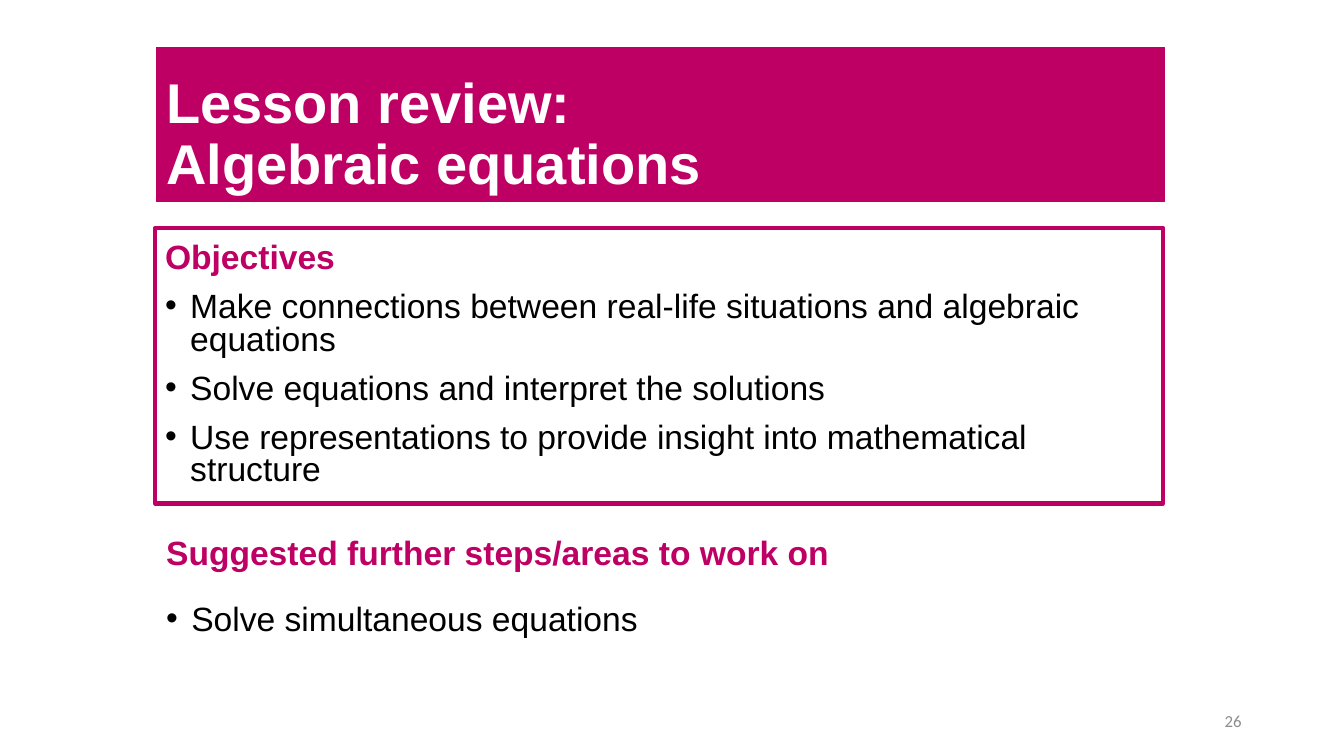
from lxml import etree
from pptx import Presentation
from pptx.dml.color import RGBColor
from pptx.enum import shapes, text
from pptx.oxml import ns
from pptx.util import Pt

MAGENTA = "BE0064"
WHITE = "FFFFFF"
BLACK = "000000"
GREY = "8C8C8C"


def colour(code):
    return RGBColor.from_string(code)


def prepare_frame(shape, anchor):
    frame = shape.text_frame
    frame.word_wrap = True
    frame.vertical_anchor = anchor
    return frame


def add_panel(slide, left, top, width, height, line_width, fill=None, anchor=text.MSO_ANCHOR.TOP):
    panel = slide.shapes.add_shape(
        shapes.MSO_SHAPE.RECTANGLE, Pt(left), Pt(top), Pt(width), Pt(height))
    panel.shadow.inherit = False
    if fill:
        panel.fill.solid()
        panel.fill.fore_color.rgb = colour(fill)
    else:
        panel.fill.background()
    panel.line.color.rgb = colour(MAGENTA)
    panel.line.width = Pt(line_width)
    return prepare_frame(panel, anchor)


def add_text_area(slide, left, top, width, height, anchor=text.MSO_ANCHOR.TOP):
    area = slide.shapes.add_textbox(Pt(left), Pt(top), Pt(width), Pt(height))
    return prepare_frame(area, anchor)


def add_run(paragraph, wording, size, ink, bold=False, font="Arial"):
    run = paragraph.add_run()
    run.text = wording
    run.font.name = font
    run.font.size = Pt(size)
    run.font.bold = bold
    run.font.color.rgb = colour(ink)


def space(paragraph, before, line_spacing):
    paragraph.alignment = text.PP_ALIGN.LEFT
    paragraph.space_before = Pt(before)
    paragraph.space_after = Pt(6)
    paragraph.line_spacing = line_spacing


def add_bullet(paragraph):
    properties = paragraph._p.get_or_add_pPr()
    properties.set("marL", str(Pt(18)))
    properties.set("indent", str(Pt(-18)))
    etree.SubElement(properties, ns.qn("a:buFont")).set("typeface", "Arial")
    etree.SubElement(properties, ns.qn("a:buChar")).set("char", "•")


def write_list(frame, heading, items, before, item_spacing):
    title = frame.paragraphs[0]
    space(title, before, Pt(31))
    add_run(title, heading, 24, MAGENTA, bold=True)
    for item in items:
        entry = frame.add_paragraph()
        space(entry, before, item_spacing)
        add_bullet(entry)
        add_run(entry, item, 24, BLACK)


def main():
    deck = Presentation()
    deck.slide_width, deck.slide_height = Pt(960), Pt(540)
    slide = deck.slides.add_slide(deck.slide_layouts[6])

    banner = add_panel(slide, 111.6, 33.9, 720, 110, 0.75, MAGENTA, text.MSO_ANCHOR.BOTTOM)
    lesson = banner.paragraphs[0]
    lesson.alignment = text.PP_ALIGN.LEFT
    lesson.line_spacing = 0.9
    add_run(lesson, "Lesson review: ", 40, WHITE, bold=True)
    lesson.add_line_break()
    add_run(lesson, "Algebraic equations", 40, WHITE, bold=True)

    further_steps = add_text_area(slide, 111.6, 374.4, 720, 138)
    write_list(further_steps, "Suggested further steps/areas to work on",
               ["Solve simultaneous equations"], 10, Pt(31))

    page = add_text_area(slide, 678, 500.5, 216, 28.8, text.MSO_ANCHOR.MIDDLE).paragraphs[0]
    page.alignment = text.PP_ALIGN.RIGHT
    add_run(page, "26", 12, GREY, font="Calibri")

    objectives = add_panel(slide, 110.8, 162.8, 720, 196.8, 3)
    write_list(objectives, "Objectives", [
        "Make connections between real-life situations and algebraic equations",
        "Solve equations and interpret the solutions",
        "Use representations to provide insight into mathematical structure",
    ], 6, 0.8)

    deck.save("out.pptx")


if __name__ == "__main__":
    main()
